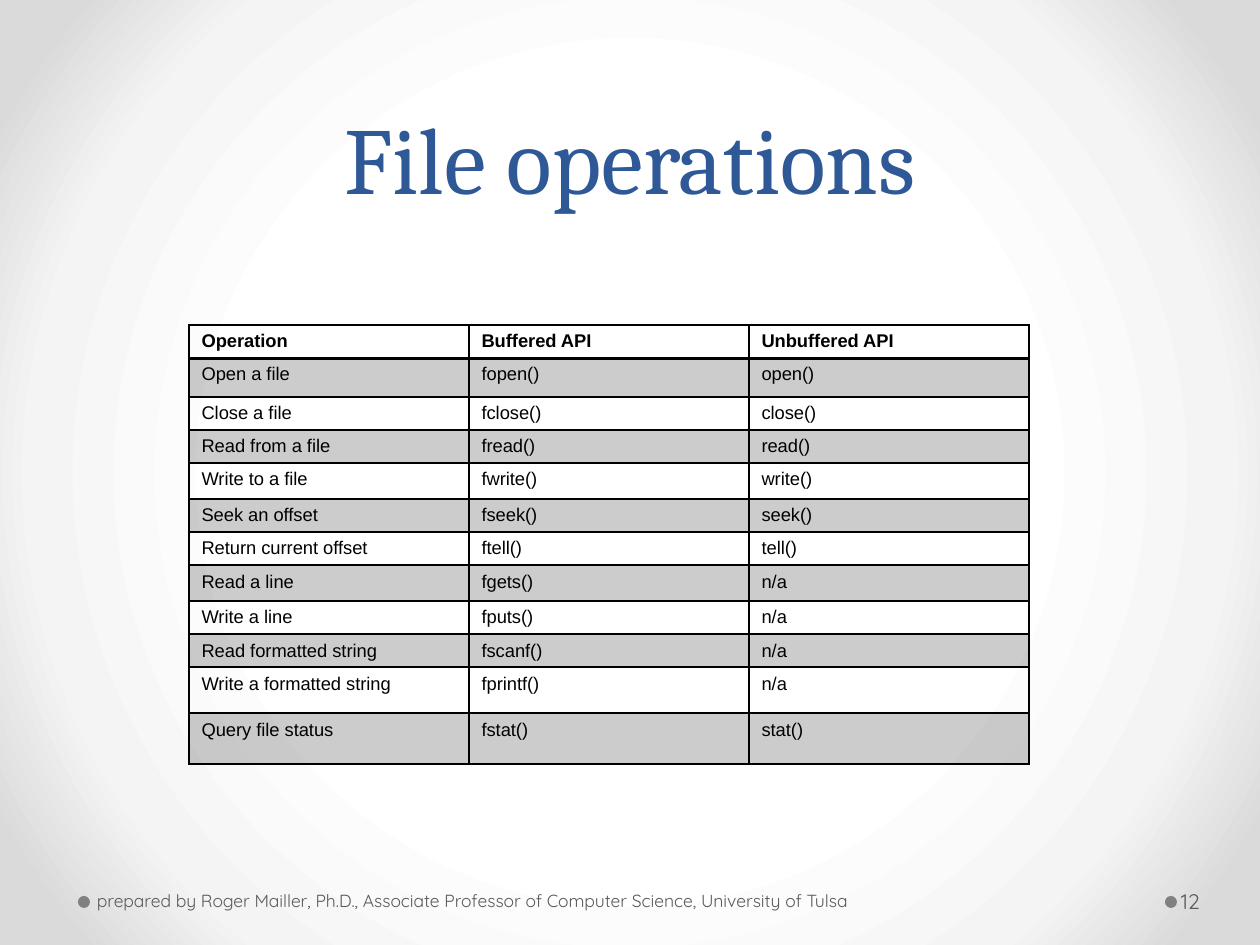
from pptx import Presentation, util as u
from pptx.dml.color import RGBColor
from pptx.enum import shapes, text
from pptx.oxml import parse_xml
from pptx.oxml.ns import nsdecls, qn
from lxml import etree

# Content
TITLE = "File operations"
ROWS = [
    ("Operation", "Buffered API", "Unbuffered API"),
    ("Open a file", "fopen()", "open()"),
    ("Close a file", "fclose()", "close()"),
    ("Read from a file", "fread()", "read()"),
    ("Write to a file", "fwrite()", "write()"),
    ("Seek an offset", "fseek()", "seek()"),
    ("Return current offset", "ftell()", "tell()"),
    ("Read a line", "fgets()", "n/a"),
    ("Write a line", "fputs()", "n/a"),
    ("Read formatted string", "fscanf()", "n/a"),
    ("Write a formatted string", "fprintf()", "n/a"),
    ("Query file status", "fstat()", "stat()"),
]
HEIGHTS = [33, 39, 33, 33, 36, 33, 33, 36, 33, 33, 46, 51]
COL = 280
# Text, box, insets and size in the footer
FOOTER = [
    ("prepared by Roger Mailler, Ph.D., Associate Professor of Computer Science, "
     "University of Tulsa", (91, 876, 886, 50), (6, 6, 13, 6), 10),
    ("12", (1177, 876, 77, 50), (4, 6, 6, 6), 12),
]
DOTS = [78, 1165]
STOPS = [(50, "FFFFFF"), (76, "F4F4F4"), (92, "DADADA")]

BLUE = RGBColor(0x2F, 0x58, 0x97)
BLACK = RGBColor(0, 0, 0)
DARK = RGBColor(0x59, 0x59, 0x59)
GREY = RGBColor(0x80, 0x80, 0x80)


def px(n):
    return u.Emu(round(n * 914400 / 126))


def write(frame, words, size, font, color, bold=False, align=None, lead=None):
    para = frame.paragraphs[0]
    para.alignment = align
    para.line_spacing = lead
    run = para.add_run()
    run.text = words
    run.font.size = u.Pt(size)
    run.font.name = font
    run.font.bold = bold
    run.font.color.rgb = color


def edge(cell, side, width):
    cell._tc.get_or_add_tcPr().append(parse_xml(
        f'<a:ln{side} {nsdecls("a")} w="{u.Pt(width)}"><a:solidFill>'
        f'<a:srgbClr val="{BLACK}"/></a:solidFill></a:ln{side}>'))


prs = Presentation()
prs.slide_width, prs.slide_height = px(1260), px(945)
slide = prs.slides.add_slide(prs.slide_layouts[5])

# Radial background
stops = "".join(f'<a:gs pos="{pos * 1000}"><a:srgbClr val="{tint}"/></a:gs>'
                for pos, tint in STOPS)
slide._element.cSld.insert(0, parse_xml(
    f'<p:bg {nsdecls("p", "a")}><p:bgPr><a:gradFill rotWithShape="1">'
    f'<a:gsLst>{stops}</a:gsLst><a:path path="circle">'
    '<a:fillToRect l="50000" t="50000" r="50000" b="50000"/></a:path>'
    '</a:gradFill><a:effectLst/></p:bgPr></p:bg>'))

# Footer dots
for x in DOTS:
    dot = slide.shapes.add_shape(shapes.MSO_SHAPE.OVAL, px(x), px(896), px(12), px(12))
    dot.shadow.inherit = False
    dot.fill.solid()
    dot.fill.fore_color.rgb = GREY
    dot.line.fill.background()

# Title
title = slide.shapes.title
title.left, title.top, title.width, title.height = map(px, (63, 0, 1134, 220))
frame = title.text_frame
frame.auto_size = text.MSO_AUTO_SIZE.NONE
frame.vertical_anchor = text.MSO_ANCHOR.BOTTOM
write(frame, TITLE, 54, "Cambria", BLUE, align=text.PP_ALIGN.CENTER, lead=u.Pt(58))

# Table with every second row shaded
table = slide.shapes.add_table(len(ROWS), len(ROWS[0]), px(189), px(325),
                               px(COL * len(ROWS[0])), px(sum(HEIGHTS))).table
table.first_row = table.horz_banding = False
for col in table.columns:
    col.width = px(COL)
for r, (row, high) in enumerate(zip(ROWS, HEIGHTS)):
    table.rows[r].height = px(high)
    for c, words in enumerate(row):
        cell = table.cell(r, c)
        for side in "LRTB":
            thick = (r, side) in ((0, "B"), (1, "T"))
            edge(cell, side, 2 if thick else 1)
        if r % 2:
            cell.fill.solid()
            cell.fill.fore_color.rgb = BLACK
            tint = cell._tc.tcPr.find(qn("a:solidFill"))[0]
            etree.SubElement(tint, qn("a:alpha"), val="20000")
        else:
            cell.fill.background()
        write(cell.text_frame, words, 10.5, "Arial", BLACK, bold=r == 0)

# Footer text
for words, box, pads, size in FOOTER:
    frame = slide.shapes.add_textbox(*map(px, box)).text_frame
    frame.word_wrap = True
    frame.vertical_anchor = text.MSO_ANCHOR.MIDDLE
    (frame.margin_left, frame.margin_top,
     frame.margin_right, frame.margin_bottom) = map(px, pads)
    write(frame, words, size, "Quicksand", DARK)

prs.save("out.pptx")
